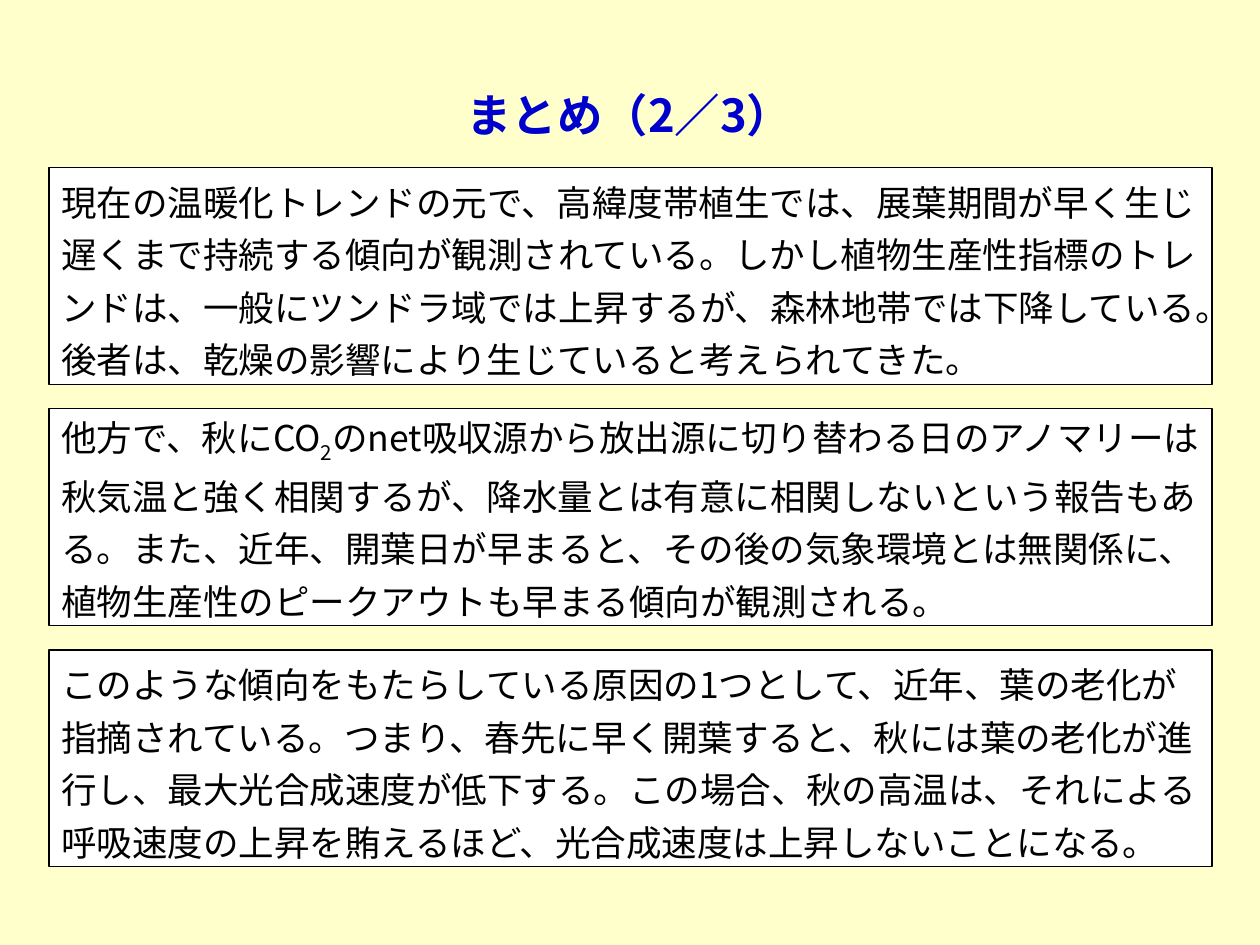
from dataclasses import dataclass

from lxml import etree
from pptx import Presentation
from pptx.dml.color import RGBColor
from pptx.enum.shapes import MSO_SHAPE
from pptx.enum.text import MSO_ANCHOR, MSO_AUTO_SIZE, PP_ALIGN
from pptx.oxml.ns import qn
from pptx.util import Inches, Pt


@dataclass(frozen=True)
class Theme:
    background: RGBColor = RGBColor(0xFF, 0xFF, 0xCC)
    title: RGBColor = RGBColor(0x00, 0x00, 0xCC)
    ink: RGBColor = RGBColor(0x00, 0x00, 0x00)
    panel: RGBColor = RGBColor(0xFF, 0xFF, 0xFF)
    font: str = "Noto Sans CJK JP"
    title_size: float = 25.9
    body_size: float = 20.3


@dataclass(frozen=True)
class TextPart:
    text: str
    subscript: bool = False


THEME = Theme()
PANEL_LEFT, PANEL_TOP, PANEL_WIDTH, PANEL_HEIGHT = 0.39, 1.33, 9.23, 1.72
PANEL_PITCH = 1.915

SUMMARIES = [
    [TextPart(
        "現在の温暖化トレンドの元で、高緯度帯植生では、展葉期間が早く生じ"
        "遅くまで持続する傾向が観測されている。しかし植物生産性指標のトレ"
        "ンドは、一般にツンドラ域では上昇するが、森林地帯では下降している。"
        "後者は、乾燥の影響により生じていると考えられてきた。")],
    [TextPart("他方で、秋にCO"),
     TextPart("2", subscript=True),
     TextPart(
        "のnet吸収源から放出源に切り替わる日のアノマリー"
        "は秋気温と強く相関するが、降水量とは有意に相関しないという報告も"
        "ある。また、近年、開葉日が早まると、その後の気象環境とは無関係に、"
        "植物生産性のピークアウトも早まる傾向が観測される。")],
    [TextPart(
        "このような傾向をもたらしている原因の1つとして、近年、葉の老化が"
        "指摘されている。つまり、春先に早く開葉すると、秋には葉の老化が進"
        "行し、最大光合成速度が低下する。この場合、秋の高温は、それによる"
        "呼吸速度の上昇を賄えるほど、光合成速度は上昇しないことになる。")],
]


def set_attributes(target, values: dict) -> None:
    for name, value in values.items():
        setattr(target, name, value)


def add_run(paragraph, part: TextPart, size: float, color: RGBColor, bold: bool = False) -> None:
    """Add a run with the theme font for both Latin and Japanese letters."""
    run = paragraph.add_run()
    run.text = part.text
    set_attributes(run.font, {"name": THEME.font, "size": Pt(size), "bold": bold})
    run.font.color.rgb = color
    properties = run._r.get_or_add_rPr()
    properties.set("lang", "ja-JP")
    if part.subscript:
        properties.set("baseline", "-25000")
    etree.SubElement(properties, qn("a:ea")).set("typeface", THEME.font)


def add_title(slide, text: str) -> None:
    title = slide.shapes.title
    set_attributes(title, {"left": Inches(0.61), "top": Inches(0.52),
                           "width": Inches(8.77), "height": Inches(0.77)})
    set_attributes(title.text_frame, {"vertical_anchor": MSO_ANCHOR.MIDDLE, "word_wrap": True,
                                      "auto_size": MSO_AUTO_SIZE.NONE})
    paragraph = title.text_frame.paragraphs[0]
    paragraph.alignment = PP_ALIGN.CENTER
    add_run(paragraph, TextPart(text), THEME.title_size, THEME.title, bold=True)


def add_panel(slide, top: float, parts: list[TextPart]) -> None:
    panel = slide.shapes.add_shape(MSO_SHAPE.RECTANGLE, Inches(PANEL_LEFT), Inches(top),
                                   Inches(PANEL_WIDTH), Inches(PANEL_HEIGHT))
    panel.shadow.inherit = False
    panel.fill.solid()
    panel.fill.fore_color.rgb = THEME.panel
    panel.line.color.rgb = THEME.ink
    panel.line.width = Pt(0.75)
    set_attributes(panel.text_frame, {"vertical_anchor": MSO_ANCHOR.MIDDLE, "word_wrap": True,
                                      "auto_size": MSO_AUTO_SIZE.SHAPE_TO_FIT_TEXT})
    paragraph = panel.text_frame.paragraphs[0]
    set_attributes(paragraph, {"alignment": PP_ALIGN.LEFT, "line_spacing": Pt(30),
                               "space_after": Pt(6)})
    for part in parts:
        add_run(paragraph, part, THEME.body_size, THEME.ink)


def main() -> None:
    presentation = Presentation()
    set_attributes(presentation, {"slide_width": Inches(10), "slide_height": Inches(7.5)})
    slide = presentation.slides.add_slide(presentation.slide_layouts.get_by_name("Title Only"))
    slide.background.fill.solid()
    slide.background.fill.fore_color.rgb = THEME.background
    add_title(slide, "まとめ（2／3）")
    for index, parts in enumerate(SUMMARIES):
        add_panel(slide, PANEL_TOP + index * PANEL_PITCH, parts)
    presentation.save("out.pptx")


if __name__ == "__main__":
    main()
